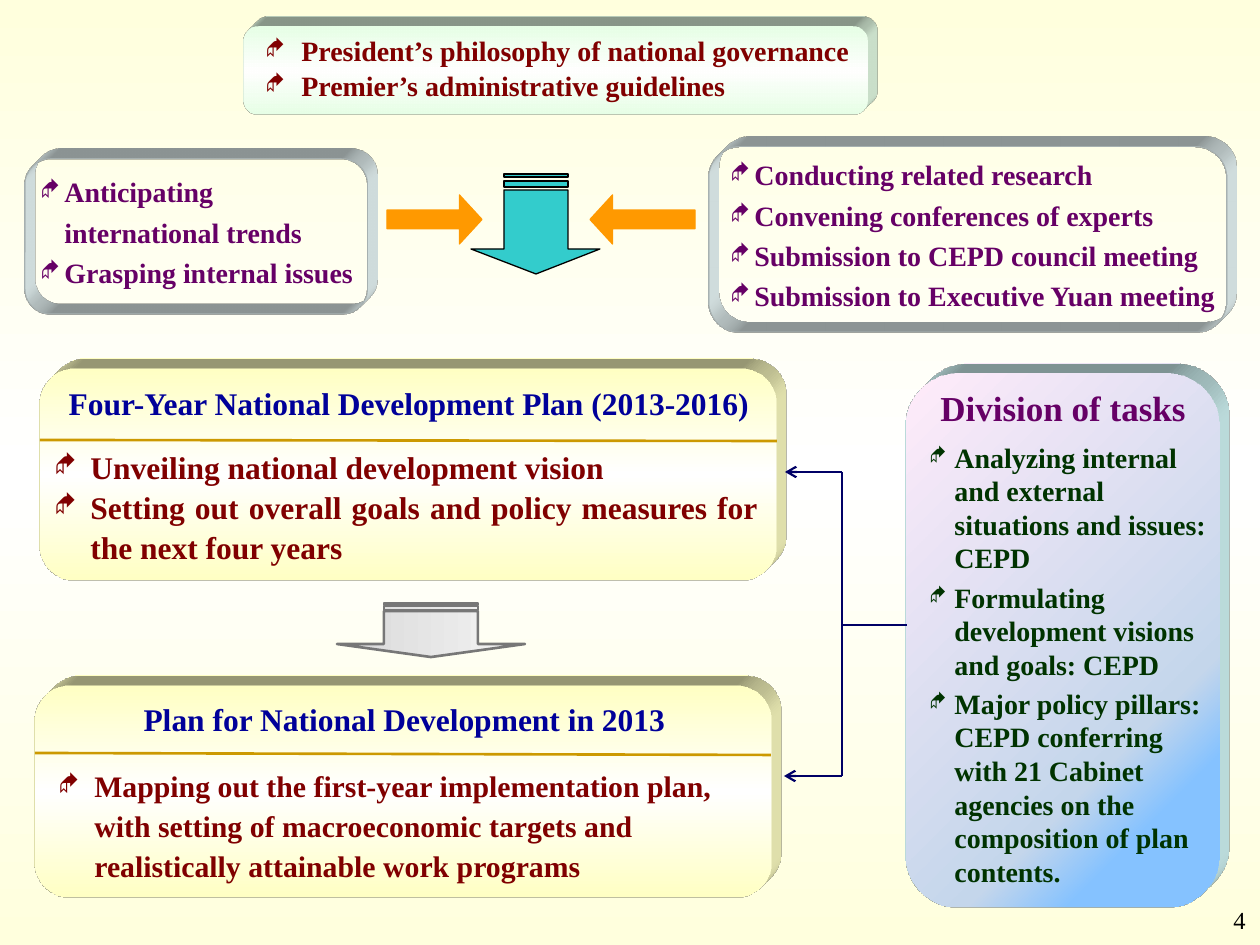
from lxml import etree
from pptx import Presentation
from pptx import util as u
from pptx.dml import color
from pptx.enum import shapes, text
from pptx.oxml import ns

PX = 914400 / 126
FONT = "Times New Roman"
YELLOW = [(0, "FFFFC3"), (50, "FFFFFF"), (100, "FFFFC3")]
GREEN = [(0, "E7FFE7"), (50, "FFFFFF"), (100, "E7FFE7")]
BLUE = [(18, "85C2FF"), (30, "C4D6EB"), (100, "FFEBFA")]
BACKDROP = [(0, "FFFFDD"), (50, "FFFFFF"), (100, "FFFFDD")]
SILVER = [(0, "D8D8D8"), (100, "F4F4F4")]
TEAL = [(0, "33CCCC"), (100, "33CCCC")]

BOXES = [
    ((40, 368, 737, 213), YELLOW, 90, "FFFFC3"),
    ((243, 26, 625, 89), GREEN, 90, "E7FFE7"),
    ((709, 147, 517, 185), None, 0, "EDFBFB"),
    ((25, 159, 342, 155), None, 0, "EDFBFB"),
    ((906, 373, 314, 535), BLUE, 225, "D5F9F9"),
    ((35, 685, 737, 213), YELLOW, 90, "FFFFC3"),
]

GUIDANCE = ["President’s philosophy of national governance",
            "Premier’s administrative guidelines"]
TRENDS = ["Anticipating international trends", "Grasping internal issues"]
RESEARCH = ["Conducting related research", "Convening conferences of experts",
            "Submission to CEPD council meeting",
            "Submission to Executive Yuan meeting"]
VISION = ["Unveiling national development vision",
          "Setting out overall goals and policy measures for the next four years"]
FIRST_YEAR = ["Mapping out the first-year implementation plan, with setting of "
              "macroeconomic targets and realistically attainable work programs"]
TASKS = ["Analyzing internal and external situations and issues: CEPD",
         "Formulating development visions and goals: CEPD",
         "Major policy pillars: CEPD conferring with 21 Cabinet agencies "
         "on the composition of plan contents."]

TITLE = dict(size=18, ink="000099", align="CENTER", leading=0.95)
MAROON = dict(ink="800000", leading=u.Pt(23), indent=(36, 36))
PURPLE = dict(size=16, ink="660066", leading=u.Pt(23))
TEXTS = [
    (["Four-Year National Development Plan (2013-2016)"], (51, 381, 716, 49), TITLE),
    (VISION, (42, 439, 728, 132), dict(MAROON, size=18, align="JUSTIFY")),
    (GUIDANCE, (253, 26, 655, 83), dict(MAROON, size=16, leading=u.Pt(20))),
    (RESEARCH, (705, 145, 535, 193), dict(PURPLE, indent=(37, 24))),
    (TRENDS, (28, 162, 346, 135), dict(PURPLE, indent=(24, 24))),
    (["Division of tasks"], (928, 383, 279, 53),
     dict(size=20, ink="660066", leading=0.95)),
    (TASKS, (917, 434, 308, 464),
     dict(size=16, ink="003300", indent=(25, 25), bullet=70, gap=1.6)),
    (["Plan for National Development in 2013"], (46, 697, 717, 49), TITLE),
    (FIRST_YEAR, (46, 757, 728, 132), dict(MAROON, size=17)),
    (["4"], (964, 899, 294, 65),
     dict(size=14, ink="000000", bold=False, align="RIGHT")),
]

BLOCK_ARROWS = [("RIGHT_ARROW", (387, 195, 95, 49)),
                ("LEFT_ARROW", (590, 195, 105, 49))]
STRIPED_ARROWS = [
    ((471, 504, 568, 600), (190, 249, 274), [(181, 187), (174, 177)],
     TEAL, "000000", 0.75),
    ((337, 384, 478, 525), (611, 644, 657), [(606, 610), (603, 605)],
     SILVER, "777777", 1.5),
]
LINES = [
    ((40, 440, 777, 441), "CC9900", 1.5, False),
    ((35, 753, 771, 755), "CC9900", 1.5, False),
    ((842, 472, 785, 472), "000066", 1.25, True),
    ((842, 776, 784, 776), "000066", 1.25, True),
    ((842, 472, 842, 776), "000066", 1.25, False),
    ((842, 625, 907, 625), "000066", 1.25, False),
]


def px(value):
    return round(value * PX)


def rgb(value):
    return color.RGBColor.from_string(value)


def add_child(parent, name, **attributes):
    return etree.SubElement(parent, ns.qn("a:" + name), **attributes)


def paint(fill, element, stops, angle):
    fill.gradient()
    gradient = element.find(".//" + ns.qn("a:gradFill"))
    stop_list = gradient.find(ns.qn("a:gsLst"))
    for stop in list(stop_list):
        stop_list.remove(stop)
    for position, ink in stops:
        stop = add_child(stop_list, "gs", pos=str(position * 1000))
        add_child(stop, "srgbClr", val=ink)
    gradient.find(ns.qn("a:lin")).set("ang", str(angle * 60000))


def outline(shape, ink=None, width=0.75):
    shape.shadow.inherit = False
    if ink:
        shape.line.color.rgb = rgb(ink)
        shape.line.width = u.Pt(width)
    else:
        shape.line.fill.background()


def extrude(shape, ink):
    props = shape.element.spPr
    scene = add_child(props, "scene3d")
    add_child(scene, "camera", prst="legacyObliqueTopRight")
    add_child(scene, "lightRig", rig="legacyFlat3", dir="b")
    solid = add_child(props, "sp3d", extrusionH="201600", prstMaterial="legacyMatte")
    for bevel in ("bevelT", "bevelB"):
        add_child(solid, bevel, w="13500", h="13500", prst="angle")
    add_child(add_child(solid, "extrusionClr"), "srgbClr", val=ink)


def add_preset(page, name, place):
    kind = getattr(shapes.MSO_SHAPE, name)
    return page.shapes.add_shape(kind, *map(px, place))


def add_outline(page, contours):
    builder = page.shapes.build_freeform(*contours[0][0], scale=PX)
    builder.add_line_segments(contours[0][1:], close=True)
    for contour in contours[1:]:
        builder.move_to(*contour[0])
        builder.add_line_segments(contour[1:], close=True)
    return builder.convert_to_shape()


def add_text(page, lines, place, size, ink, bold=True, align="LEFT",
             leading=None, indent=None, bullet=80, gap=0):
    box = page.shapes.add_textbox(*map(px, place))
    frame = box.text_frame
    frame.word_wrap = True
    for number, line in enumerate(lines):
        para = frame.paragraphs[0] if number == 0 else frame.add_paragraph()
        para.alignment = getattr(text.PP_ALIGN, align)
        para.line_spacing = leading
        para.space_before = para.space_after = u.Pt(gap)
        span = para.add_run()
        span.text = line
        span.font.name, span.font.size, span.font.bold = FONT, u.Pt(size), bold
        span.font.color.rgb = rgb(ink)
        if indent:
            margin, hang = indent
            props = para._p.get_or_add_pPr()
            props.set("marL", str(px(margin)))
            props.set("indent", str(-px(hang)))
            add_child(props, "buSzPct", val=str(bullet * 1000))
            add_child(props, "buFont", typeface="Wingdings", charset="2")
            add_child(props, "buChar", char="◆")


def add_line(page, ends, ink, width, arrow):
    line = page.shapes.add_connector(shapes.MSO_CONNECTOR.STRAIGHT, *map(px, ends))
    line.line.color.rgb = rgb(ink)
    line.line.width = u.Pt(width)
    if arrow:
        add_child(line.element.spPr.find(ns.qn("a:ln")), "tailEnd", type="arrow")
    add_child(line.element.spPr, "effectLst")


def main():
    deck = Presentation()
    deck.slide_width, deck.slide_height = u.Inches(10), u.Inches(7.5)
    page = deck.slides.add_slide(deck.slide_layouts[6])
    paint(page.background.fill, page.element, BACKDROP, 90)

    for place, stops, angle, side in BOXES:
        box = add_preset(page, "ROUNDED_RECTANGLE", place)
        if stops:
            paint(box.fill, box.element, stops, angle)
            outline(box)
        else:
            box.fill.background()
            outline(box, side)
        extrude(box, side)

    for name, place in BLOCK_ARROWS:
        arrow = add_preset(page, name, place)
        arrow.adjustments[0], arrow.adjustments[1] = 0.38, 0.46
        arrow.fill.solid()
        arrow.fill.fore_color.rgb = rgb("FF9900")
        outline(arrow, "FF9900")

    for (x1, x2, x3, x4), (top, neck, tip), stripes, stops, ink, width in STRIPED_ARROWS:
        head = [(x4, neck), (x3, neck), (x3, top), (x2, top), (x2, neck),
                (x1, neck), ((x1 + x4) / 2, tip)]
        bars = [[(x3, y1), (x2, y1), (x2, y2), (x3, y2)] for y1, y2 in stripes]
        arrow = add_outline(page, [head] + bars)
        paint(arrow.fill, arrow.element, stops, 0)
        outline(arrow, ink, width)

    for line in LINES:
        add_line(page, *line)
    for lines, place, style in TEXTS:
        add_text(page, lines, place, **style)
    deck.save("out.pptx")


if __name__ == "__main__":
    main()
